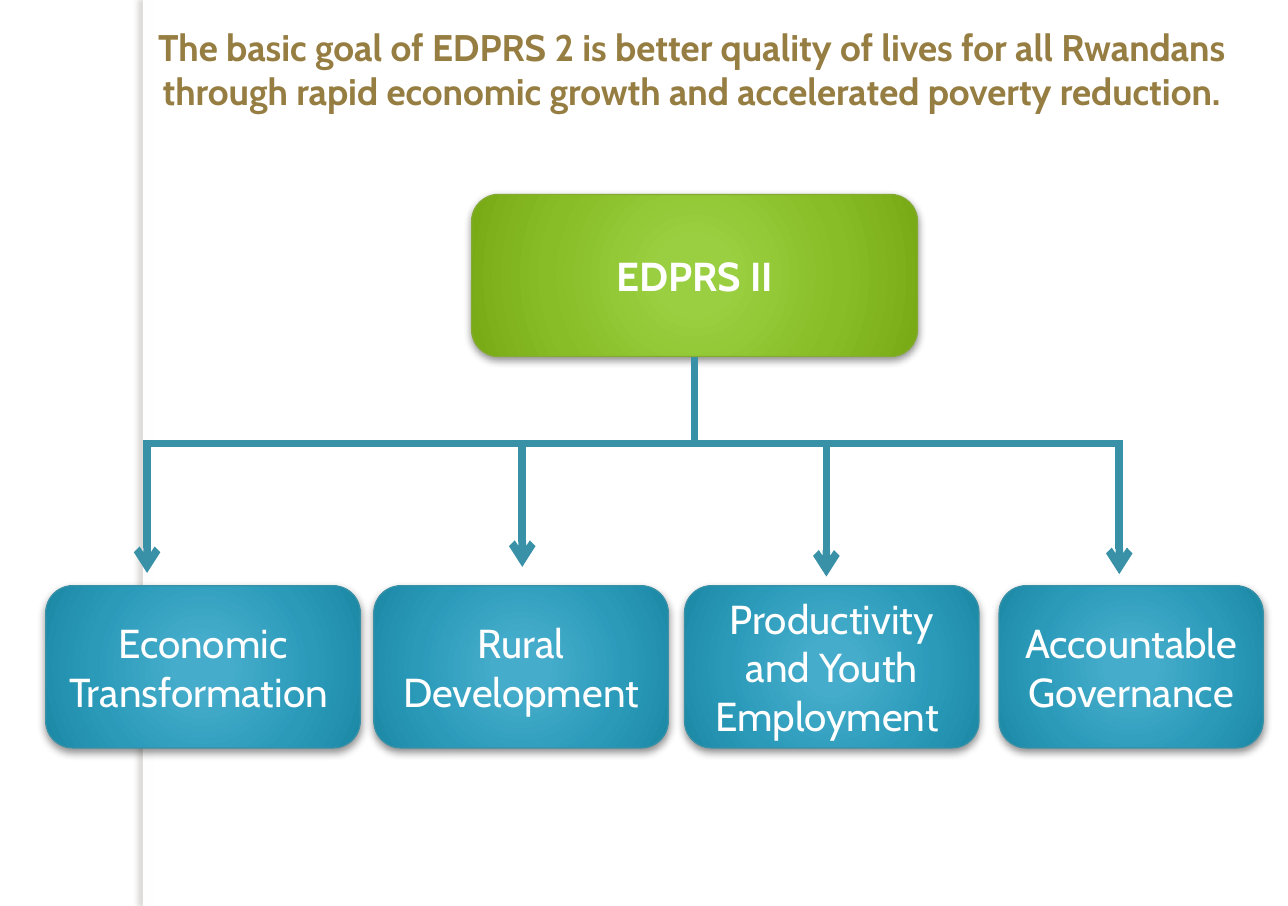
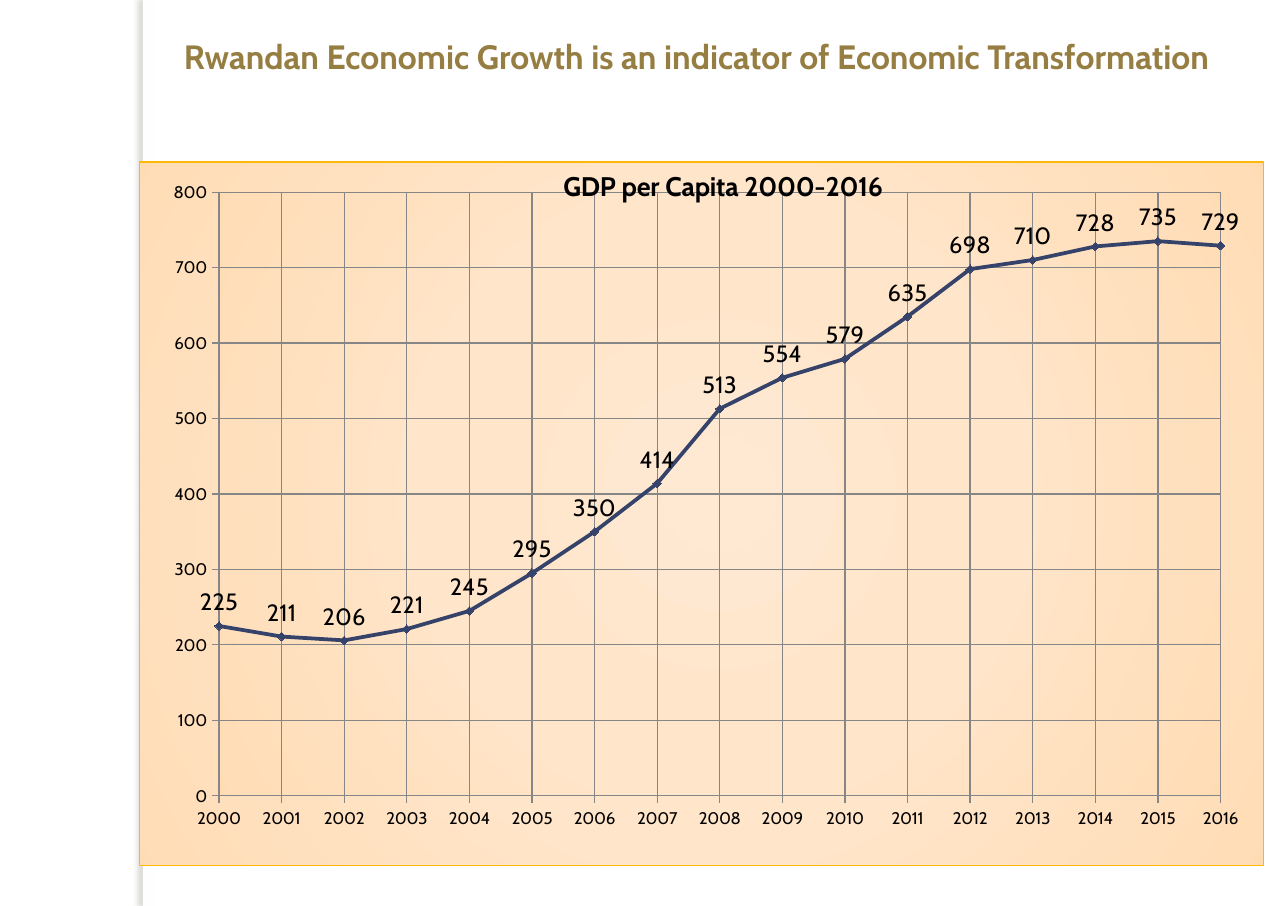
from dataclasses import dataclass

from pptx import Presentation
from pptx.chart.data import XyChartData
from pptx.dml.color import RGBColor
from pptx.enum.chart import XL_CHART_TYPE, XL_MARKER_STYLE, XL_TICK_MARK
from pptx.enum.shapes import MSO_CONNECTOR, MSO_SHAPE
from pptx.enum.text import MSO_ANCHOR, MSO_AUTO_SIZE, PP_ALIGN
from pptx.oxml import parse_xml
from pptx.oxml.ns import nsdecls, qn
from pptx.util import Inches, Pt

SCATTER = XL_CHART_TYPE.XY_SCATTER_LINES
DIAMOND = XL_MARKER_STYLE.DIAMOND
OUTSIDE = XL_TICK_MARK.OUTSIDE
STRAIGHT = MSO_CONNECTOR.STRAIGHT
RECT, ROUND = MSO_SHAPE.RECTANGLE, MSO_SHAPE.ROUNDED_RECTANGLE
TOP, MIDDLE = MSO_ANCHOR.TOP, MSO_ANCHOR.MIDDLE
FIXED = MSO_AUTO_SIZE.NONE
CENTER = PP_ALIGN.CENTER

WIDE, HIGH = Inches(10.63), Inches(7.48)
TITLE_ONLY = 5
BOTTOM = 2


@dataclass(frozen=True)
class Theme:
    font: str = "Cabin"
    title: str = "967D42"
    white: str = "FFFFFF"
    pale: str = "FEFEFE"
    black: str = "000000"
    spine: str = "736F63"
    teal: str = "3891A7"
    green: str = "84AA33"
    gold: str = "FEB80A"
    navy: str = "35436A"
    grid: str = "868686"
    teals: tuple = ((0, "45ACCC"), (15, "45ACCB"), (62, "2B9AB9"),
                    (97, "1C8AA7"), (100, "0E89A7"))
    greens: tuple = ((0, "9AD041"), (15, "9ACF41"), (62, "88BD27"),
                     (97, "79AB17"), (100, "77AC08"))
    peach: tuple = ((0, "FFE9D3"), (50, "FFE5C9"), (97, "FFDDB7"),
                    (100, "FFDBB2"))
    lead: int = 22
    head: int = 20
    box: int = 24
    chart: int = 16
    label: int = 14
    axis: int = 10
    thin: float = 0.75
    curve: float = 2.25
    thick: float = 4.5


THEME = Theme()

BOX_TOP, BOX_HIGH = 64.65, 17.9
BAR = 48.93
PILLARS = (
    ("Economic Transformation ", 3.55, 24.42, 11.42, 63.24),
    ("Rural Development", 29.03, 22.86, 40.55, 62.57),
    ("Productivity and Youth Employment ", 53.15, 22.86, 64.16, 63.64),
    ("Accountable Governance", 77.57, 20.5, 86.9, 63.37),
)
GDP = (225, 211, 206, 221, 245, 295, 350, 414, 513,
       554, 579, 635, 698, 710, 728, 735, 729)
FIRST = 2000
LAST = FIRST + len(GDP) - 1


def across(share):
    return round(WIDE * share / 100)


def down(share):
    return round(HIGH * share / 100)


def area(left, top, width, height):
    return across(left), down(top), across(width), down(height)


def rgb(code):
    return RGBColor.from_string(code)


def style(font, size, color, bold=False):
    font.name = THEME.font
    font.size = Pt(size)
    font.bold = bold
    font.color.rgb = rgb(color)


def stroke(line, color, width):
    line.color.rgb = rgb(color)
    line.width = Pt(width)


def radial(stops):
    marks = "".join(
        f'<a:gs pos="{pos * 1000}"><a:srgbClr val="{code}"/></a:gs>'
        for pos, code in stops)
    return (f'<a:gradFill {nsdecls("a")} rotWithShape="1"><a:gsLst>{marks}</a:gsLst>'
            '<a:path path="circle"><a:fillToRect l="50000" t="50000" r="50000" b="50000"/>'
            '</a:path></a:gradFill>')


def shade(shape, color, alpha, blur, dist, angle):
    shape.shadow.inherit = False
    shape.element.spPr.find(qn("a:effectLst")).append(parse_xml(
        f'<a:outerShdw {nsdecls("a")} blurRad="{Pt(blur)}" dist="{Pt(dist)}" '
        f'dir="{angle * 60000}" rotWithShape="0"><a:srgbClr val="{color}">'
        f'<a:alpha val="{alpha * 1000}"/></a:srgbClr></a:outerShdw>'))


def add_spine(deck, slide):
    spine = slide.shapes.add_shape(RECT, *area(11.1, 0, 0.85, 100))
    spine.fill.solid()
    spine.fill.fore_color.rgb = rgb(THEME.pale)
    spine.line.fill.background()
    shade(spine, THEME.spine, 25, 3, 3, 180)
    spine.element.nvSpPr.cNvPr.set("id", "99")
    deck.slide_master.shapes.element.insert(2, spine.element)


def set_title(slide, text, place, size):
    title = slide.shapes.title
    title.left, title.top, title.width, title.height = area(*place)
    frame = title.text_frame
    frame.text = text
    frame.word_wrap = True
    frame.auto_size = FIXED
    frame.vertical_anchor = TOP
    para = frame.paragraphs[0]
    para.alignment = CENTER
    style(para.font, size, THEME.title, True)


def add_box(slide, text, place, stops, edge, bold=False):
    box = slide.shapes.add_shape(ROUND, *area(*place))
    box.fill.background()
    props = box.element.spPr
    props.replace(props.find(qn("a:noFill")), parse_xml(radial(stops)))
    stroke(box.line, edge, THEME.thin)
    shade(box, THEME.black, 43, 5, 2, 90)
    frame = box.text_frame
    frame.text = text
    frame.word_wrap = True
    frame.vertical_anchor = MIDDLE
    para = frame.paragraphs[0]
    para.alignment = CENTER
    style(para.font, THEME.box, THEME.white, bold)
    return box


def add_line(slide, start, end, arrow=False):
    line = slide.shapes.add_connector(
        STRAIGHT, across(start[0]), down(start[1]), across(end[0]), down(end[1]))
    stroke(line.line, THEME.teal, THEME.thick)
    props = line.element.spPr
    if arrow:
        props.find(qn("a:ln")).append(
            parse_xml(f'<a:tailEnd {nsdecls("a")} type="arrow"/>'))
    props.append(parse_xml(f'<a:effectLst {nsdecls("a")}/>'))
    return line


def set_axis(axis, low, high, step):
    axis.minimum_scale, axis.maximum_scale = low, high
    axis.major_unit = step
    axis.major_tick_mark = OUTSIDE
    axis.has_major_gridlines = True
    for part in (axis, axis.major_gridlines):
        stroke(part.format.line, THEME.grid, THEME.thin)
    style(axis.tick_labels.font, THEME.axis, THEME.black)


def layout(x, y, size=None):
    inner = '<c:layoutTarget val="inner"/>' if size else ""
    spots = {"x": x, "y": y}
    if size:
        spots.update(zip("wh", size))
    modes = "".join(f'<c:{key}Mode val="edge"/>' for key in "xy")
    values = "".join(f'<c:{key} val="{val}"/>' for key, val in spots.items())
    return parse_xml(f'<c:layout {nsdecls("c")}><c:manualLayout>{inner}{modes}{values}'
                     '</c:manualLayout></c:layout>')


def backing(edge=""):
    return parse_xml(f'<c:spPr {nsdecls("c", "a")}>{radial(THEME.peach)}{edge}</c:spPr>')


def value_labels():
    shows = "".join(
        f'<c:show{name} val="{int(name == "Val")}"/>'
        for name in ("LegendKey", "Val", "CatName", "SerName", "Percent", "BubbleSize"))
    return parse_xml(
        f'<c:dLbls {nsdecls("c", "a")}><c:spPr><a:noFill/></c:spPr><c:txPr><a:bodyPr/>'
        f'<a:p><a:pPr><a:defRPr sz="{THEME.label * 100}" b="0"><a:solidFill>'
        f'<a:srgbClr val="{THEME.black}"/></a:solidFill><a:latin typeface="{THEME.font}"/>'
        '</a:defRPr></a:pPr><a:endParaRPr/></a:p></c:txPr>'
        f'<c:dLblPos val="t"/>{shows}</c:dLbls>')


def title_chart(chart, text):
    chart.has_title = True
    frame = chart.chart_title.text_frame
    frame.text = text
    style(frame.paragraphs[0].font, THEME.chart, THEME.black, True)
    title = chart.element.find(".//" + qn("c:title"))
    for tag in ("c:layout", "c:overlay"):
        for old in title.findall(qn(tag)):
            title.remove(old)
    title.find(qn("c:tx")).addnext(layout(0.373, 0.002))
    title.find(qn("c:layout")).addnext(
        parse_xml(f'<c:overlay {nsdecls("c")} val="1"/>'))


def back_chart(chart):
    root = chart.element
    edge = (f'<a:ln w="{Pt(THEME.thin)}"><a:solidFill><a:srgbClr val="{THEME.gold}"/>'
            '</a:solidFill></a:ln>')
    root.find(qn("c:chart")).addnext(backing(edge))
    plot = root.find(".//" + qn("c:plotArea"))
    for old in plot.findall(qn("c:layout")):
        plot.remove(old)
    plot.insert(0, layout(0.071, 0.043, (0.891, 0.858)))
    plot.append(backing())


def add_growth(slide, place):
    data = XyChartData()
    points = data.add_series("Series 1")
    for year, value in enumerate(GDP, FIRST):
        points.add_data_point(year, value)
    chart = slide.shapes.add_chart(SCATTER, *area(*place), data).chart
    chart.has_legend = False
    style(chart.font, THEME.axis, THEME.black)
    title_chart(chart, "GDP per Capita 2000-2016")
    set_axis(chart.category_axis, FIRST, LAST, 1)
    set_axis(chart.value_axis, 0, 800, 100)
    plot = chart.plots[0]
    plot.vary_by_categories = False
    curve = plot.series[0]
    stroke(curve.format.line, THEME.navy, THEME.curve)
    mark = curve.marker
    mark.style, mark.size = DIAMOND, 5
    mark.format.fill.solid()
    mark.format.fill.fore_color.rgb = rgb(THEME.navy)
    stroke(mark.format.line, THEME.navy, THEME.thin)
    chart.element.find(".//" + qn("c:xVal")).addprevious(value_labels())
    back_chart(chart)


def draw_goal(slide):
    set_title(slide, "The basic goal of EDPRS 2 is better quality of lives for all Rwandans "
              "through rapid economic growth and accelerated poverty reduction.",
              (10.72, 2.01, 85.98, 16.18), THEME.lead)
    goal = add_box(slide, "EDPRS II", (36.62, 21.46, 34.62, BOX_HIGH),
                   THEME.greens, THEME.green, True)
    for text, left, width, drop, tip in PILLARS:
        add_box(slide, text, (left, BOX_TOP, width, BOX_HIGH), THEME.teals, THEME.teal)
        add_line(slide, (drop, BAR - 0.4), (drop, tip), True)
    add_line(slide, (PILLARS[0][3], BAR), (PILLARS[-1][3], BAR))
    trunk = add_line(slide, (53.93, 39.36), (53.93, BAR))
    trunk.begin_connect(goal, BOTTOM)


def draw_growth(slide):
    set_title(slide, "Rwandan Economic Growth is an indicator of Economic Transformation",
              (12.98, 3.27, 82.22, 10.43), THEME.head)
    add_growth(slide, (10.76, 17.8, 87.37, 77.81))


def main():
    deck = Presentation()
    deck.slide_width, deck.slide_height = WIDE, HIGH
    base = deck.slide_layouts[TITLE_ONLY]
    goal, growth = (deck.slides.add_slide(base) for _ in range(2))
    add_spine(deck, goal)
    draw_goal(goal)
    draw_growth(growth)
    deck.save("out.pptx")


if __name__ == "__main__":
    main()
